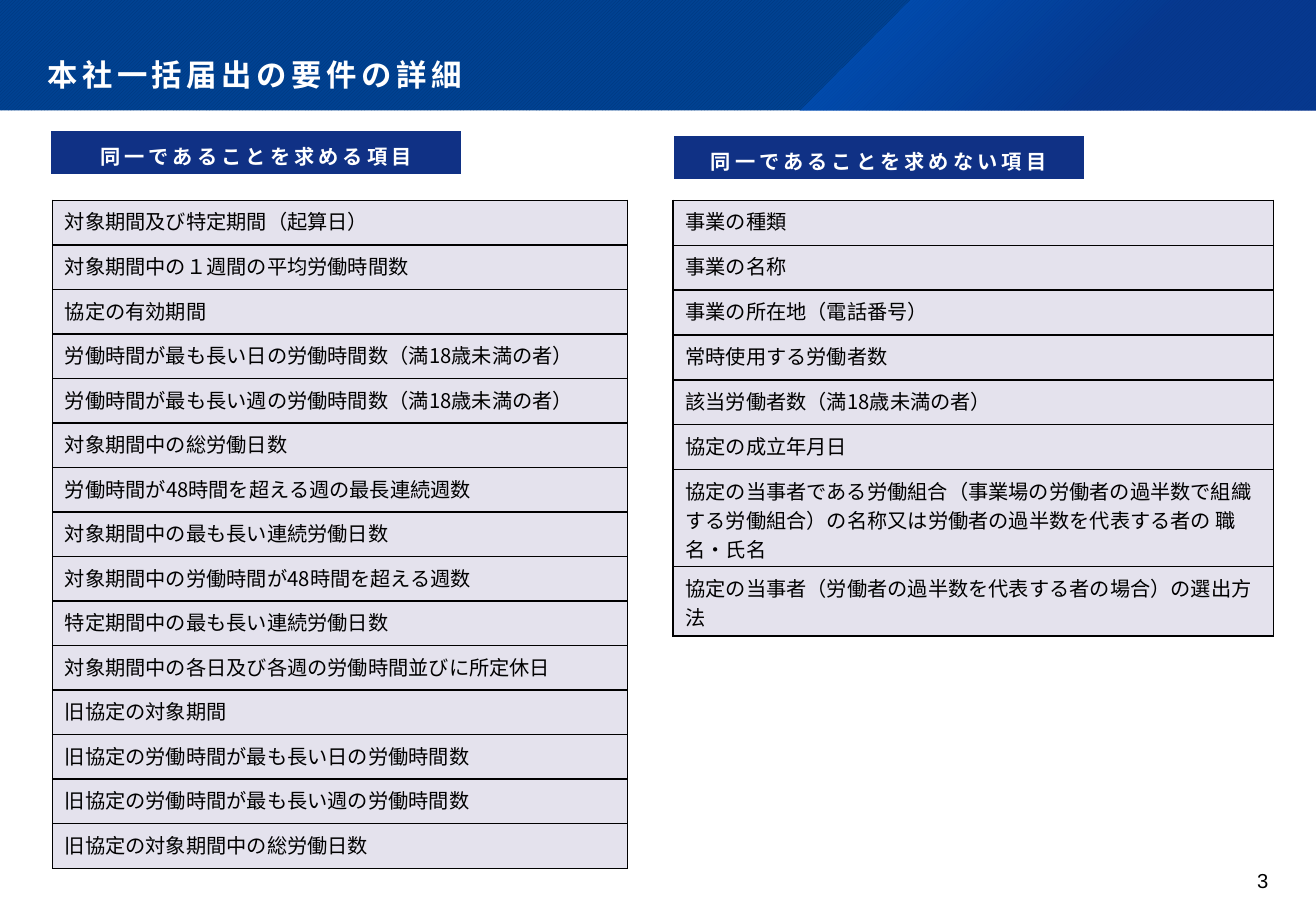
from lxml.etree import SubElement
from pptx import Presentation
from pptx.dml.color import RGBColor
from pptx.enum.dml import MSO_PATTERN
from pptx.enum.shapes import MSO_SHAPE as Shape
from pptx.enum.text import MSO_ANCHOR as Anchor, MSO_AUTO_SIZE as AutoSize, PP_ALIGN as Align
from pptx.oxml import parse_xml
from pptx.oxml.ns import nsdecls, qn
from pptx.util import Pt

WIDTH, HEIGHT, HEADER_HEIGHT = 780, 540, 65.4
JAPANESE = "Noto Sans CJK JP"
SAME_ITEMS = [
    "対象期間及び特定期間（起算日）",
    "対象期間中の１週間の平均労働時間数",
    "協定の有効期間",
    "労働時間が最も長い日の労働時間数（満18歳未満の者）",
    "労働時間が最も長い週の労働時間数（満18歳未満の者）",
    "対象期間中の総労働日数",
    "労働時間が48時間を超える週の最長連続週数",
    "対象期間中の最も長い連続労働日数",
    "対象期間中の労働時間が48時間を超える週数",
    "特定期間中の最も長い連続労働日数",
    "対象期間中の各日及び各週の労働時間並びに所定休日",
    "旧協定の対象期間",
    "旧協定の労働時間が最も長い日の労働時間数",
    "旧協定の労働時間が最も長い週の労働時間数",
    "旧協定の対象期間中の総労働日数",
]
OTHER_ITEMS = [
    "事業の種類",
    "事業の名称",
    "事業の所在地（電話番号）",
    "常時使用する労働者数",
    "該当労働者数（満18歳未満の者）",
    "協定の成立年月日",
    "協定の当事者である労働組合（事業場の労働者の過半数で組織する労働組合）の名称又は労働者の過半数を代表する者の 職名・氏名",
    "協定の当事者（労働者の過半数を代表する者の場合）の選出方法",
]


def color(value):
    return RGBColor.from_string(value)


def write(frame, text, size=12, font=JAPANESE, ink="000000", bold=False,
          spacing=0, align=Align.LEFT, line_spacing=1.0, space_after=0):
    """Fill a text frame with one formatted paragraph; spacing is between letters."""
    paragraph = frame.paragraphs[0]
    paragraph.alignment = align
    paragraph.line_spacing = line_spacing
    paragraph.space_after = Pt(space_after)
    run = paragraph.add_run()
    run.text = text
    run.font.size, run.font.bold, run.font.name = Pt(size), bold, font
    run.font.color.rgb = color(ink)
    properties = run.font._element
    properties.set("spc", str(round(spacing * 100)))
    SubElement(properties, qn("a:ea"), typeface=JAPANESE)


presentation = Presentation()
presentation.slide_width, presentation.slide_height = Pt(WIDTH), Pt(HEIGHT)
slide = presentation.slides.add_slide(presentation.slide_layouts[5])
shapes = slide.shapes

# Header band
band = shapes.add_shape(Shape.RECTANGLE, 0, 0, Pt(WIDTH), Pt(HEADER_HEIGHT))
band.shadow.inherit = False
band.fill.patterned()
band.fill.pattern = MSO_PATTERN.DARK_UPWARD_DIAGONAL
band.fill.fore_color.rgb = color("003579")
band.fill.back_color.rgb = color("004292")
band.line.fill.background()

builder = shapes.build_freeform(Pt(539.4), Pt(0.4), scale=1.0)
builder.add_line_segments(
    [(Pt(x), Pt(y)) for x, y in [(WIDTH, 0), (WIDTH, HEADER_HEIGHT), (473.8, HEADER_HEIGHT)]],
    close=True)
accent = builder.convert_to_shape()
accent.shadow.inherit = False
accent.line.fill.background()
accent.fill.background()
accent_properties = accent._element.spPr
accent_properties.replace(accent_properties.find(qn("a:noFill")), parse_xml(
    f'<a:gradFill {nsdecls("a")}><a:gsLst>'
    '<a:gs pos="0"><a:srgbClr val="0064DF"><a:alpha val="50000"/></a:srgbClr></a:gs>'
    '<a:gs pos="62000"><a:srgbClr val="0C338E"><a:alpha val="55000"/></a:srgbClr></a:gs>'
    '</a:gsLst><a:path path="circle"><a:fillToRect r="100000" b="100000"/></a:path>'
    '</a:gradFill>'))

# Title, brought in front of the band
title = shapes.title
accent._element.addnext(title._element)
title.left, title.top, title.width, title.height = 0, 0, Pt(WIDTH), Pt(HEADER_HEIGHT)
frame = title.text_frame
frame.auto_size, frame.word_wrap, frame.vertical_anchor = AutoSize.NONE, True, Anchor.BOTTOM
frame.margin_left, frame.margin_top = Pt(28), Pt(26)
frame.margin_right, frame.margin_bottom = Pt(26), Pt(10)
write(frame, "本社一括届出の要件の詳細", size=18, font="Karla", ink="FFFFFF",
      bold=True, spacing=2.7, line_spacing=0.9)

# Page number
number = shapes.add_textbox(Pt(702), Pt(514.8), Pt(49.7), Pt(21.6))
frame = number.text_frame
frame.word_wrap = True
frame.margin_left = frame.margin_top = frame.margin_right = frame.margin_bottom = 0
write(frame, "3", font="Arial", align=Align.RIGHT)

# Item tables
for left, width, items, heights in [
    (31.2, 340.6, SAME_ITEMS, [26.4] * 15),
    (399, 355.7, OTHER_ITEMS, [26.6] * 6 + [57.6, 41]),
]:
    table = shapes.add_table(len(items), 1, Pt(left), Pt(118.8), Pt(width), Pt(sum(heights))).table
    table.first_row = table.horz_banding = False
    for row, item, height in zip(table.rows, items, heights):
        row.height = Pt(height)
        cell = row.cells[0]
        write(cell.text_frame, item)
        cell_properties = cell._tc.get_or_add_tcPr()
        for side in ("lnL", "lnR", "lnT", "lnB"):
            border = SubElement(cell_properties, qn(f"a:{side}"), w=str(Pt(1)))
            SubElement(SubElement(border, qn("a:solidFill")), qn("a:srgbClr"), val="000000")
        cell.fill.solid()
        cell.fill.fore_color.rgb = color("E4E2ED")

# Column headings
for left, top, heading in [
    (27.4, 74.9, "同一であることを求める項目"),
    (396.4, 77.9, "同一であることを求めない項目"),
]:
    badge = shapes.add_shape(Shape.ROUNDED_RECTANGLE, Pt(left), Pt(top), Pt(249), Pt(31))
    badge.adjustments[0] = 0
    badge.shadow.inherit = False
    badge.fill.solid()
    badge.fill.fore_color.rgb = color("103185")
    badge.line.color.rgb = color("FFFFFF")
    badge.line.width = Pt(6)
    badge.text_frame.vertical_anchor = Anchor.MIDDLE
    write(badge.text_frame, heading, ink="FFFFFF", bold=True, spacing=2.4,
          align=Align.CENTER, line_spacing=1.3, space_after=8)

presentation.save("out.pptx")
